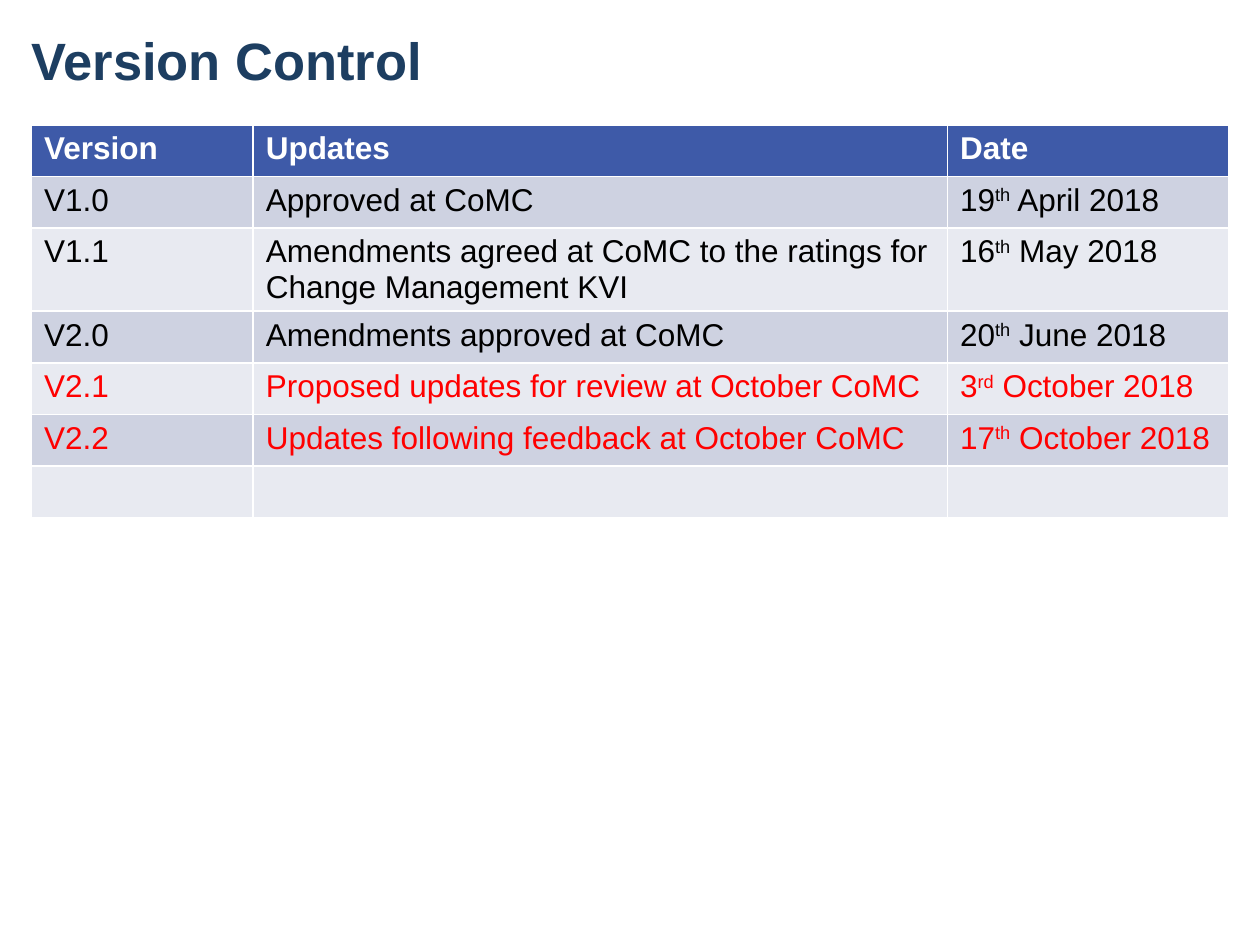
import dataclasses

import pptx
import pptx.dml.color
import pptx.enum.text
import pptx.util


@dataclasses.dataclass(frozen=True)
class Theme:
    """Colours, font and type sizes of the slide."""
    font: str = "Arial"
    title: str = "1D3E61"
    header: str = "3E5AA8"
    header_text: str = "FFFFFF"
    bands: tuple = ("CED2E1", "E8EAF1")
    text: str = "000000"
    proposed: str = "FF0000"
    title_size: int = 30
    table_size: int = 18


THEME = Theme()
HEADINGS = ("Version", "Updates", "Date")
VERSIONS = (
    ("V1.0", "Approved at CoMC", ("19", "th", " April 2018"), THEME.text),
    ("V1.1", "Amendments agreed at CoMC to the ratings for Change Management KVI",
     ("16", "th", " May 2018"), THEME.text),
    ("V2.0", "Amendments approved at CoMC", ("20", "th", " June 2018"), THEME.text),
    ("V2.1", "Proposed updates for review at October CoMC",
     ("3", "rd", " October 2018"), THEME.proposed),
    ("V2.2", "Updates following feedback at October CoMC",
     ("17", "th", " October 2018"), THEME.proposed),
    ("", "", (), THEME.text),
)
COLUMN_WIDTHS = (1.76, 5.51, 2.23)
ROW_HEIGHT = 0.41


def rgb(value):
    """Turn a hex string into a colour."""
    return pptx.dml.color.RGBColor.from_string(value)


def style(font, size, color, bold=False):
    """Format a font with the theme's typeface."""
    font.name = THEME.font
    font.size = pptx.util.Pt(size)
    font.bold = bold
    font.color.rgb = rgb(color)


def add_title(slide, box, text):
    """Place the title placeholder in the box."""
    sp = slide.shapes.title
    sp.left, sp.top, sp.width, sp.height = map(pptx.util.Inches, box)
    tf = sp.text_frame
    tf.text = text
    tf.margin_left = tf.margin_top = tf.margin_right = tf.margin_bottom = 0
    tf.vertical_anchor = pptx.enum.text.MSO_ANCHOR.MIDDLE
    p = tf.paragraphs[0]
    p.alignment = pptx.enum.text.PP_ALIGN.LEFT
    style(p.runs[0].font, THEME.title_size, THEME.title, True)


def fill_cell(cell, parts, fill, color, bold=False):
    """Write a cell, raising the second part as an ordinal suffix."""
    cell.fill.solid()
    cell.fill.fore_color.rgb = rgb(fill)
    p = cell.text_frame.paragraphs[0]
    p.font.size = pptx.util.Pt(THEME.table_size)
    for i, part in enumerate(parts):
        r = p.add_run()
        r.text = part
        style(r.font, THEME.table_size, color, bold)
        if i == 1:
            r._r.get_or_add_rPr().set("baseline", "30000")


def add_versions(slide, box):
    """Place the version table in the box, with banded rows under a header."""
    table = slide.shapes.add_table(
        len(VERSIONS) + 1, len(HEADINGS), *map(pptx.util.Inches, box)).table
    for column, width in zip(table.columns, COLUMN_WIDTHS):
        column.width = pptx.util.Inches(box[2] * width / sum(COLUMN_WIDTHS))
    for row in table.rows:
        row.height = pptx.util.Inches(ROW_HEIGHT)
    for c, heading in enumerate(HEADINGS):
        fill_cell(table.cell(0, c), (heading,), THEME.header, THEME.header_text, True)
    for r, (version, update, date, color) in enumerate(VERSIONS):
        texts = [(text,) if text else () for text in (version, update)] + [date]
        for c, parts in enumerate(texts):
            fill_cell(table.cell(r + 1, c), parts, THEME.bands[r % 2], color)


def main():
    """Build the version control slide and save it."""
    prs = pptx.Presentation()
    prs.slide_width = pptx.util.Inches(10)
    prs.slide_height = pptx.util.Inches(7.5)
    slide = prs.slides.add_slide(prs.slide_layouts[5])
    margin = 0.25
    width = 10 - 2 * margin
    add_title(slide, (margin, -0.06, width, 1.06), "Version Control")
    add_versions(slide, (margin, 0.99, width, ROW_HEIGHT * (len(VERSIONS) + 1)))
    prs.save("out.pptx")


if __name__ == "__main__":
    main()
